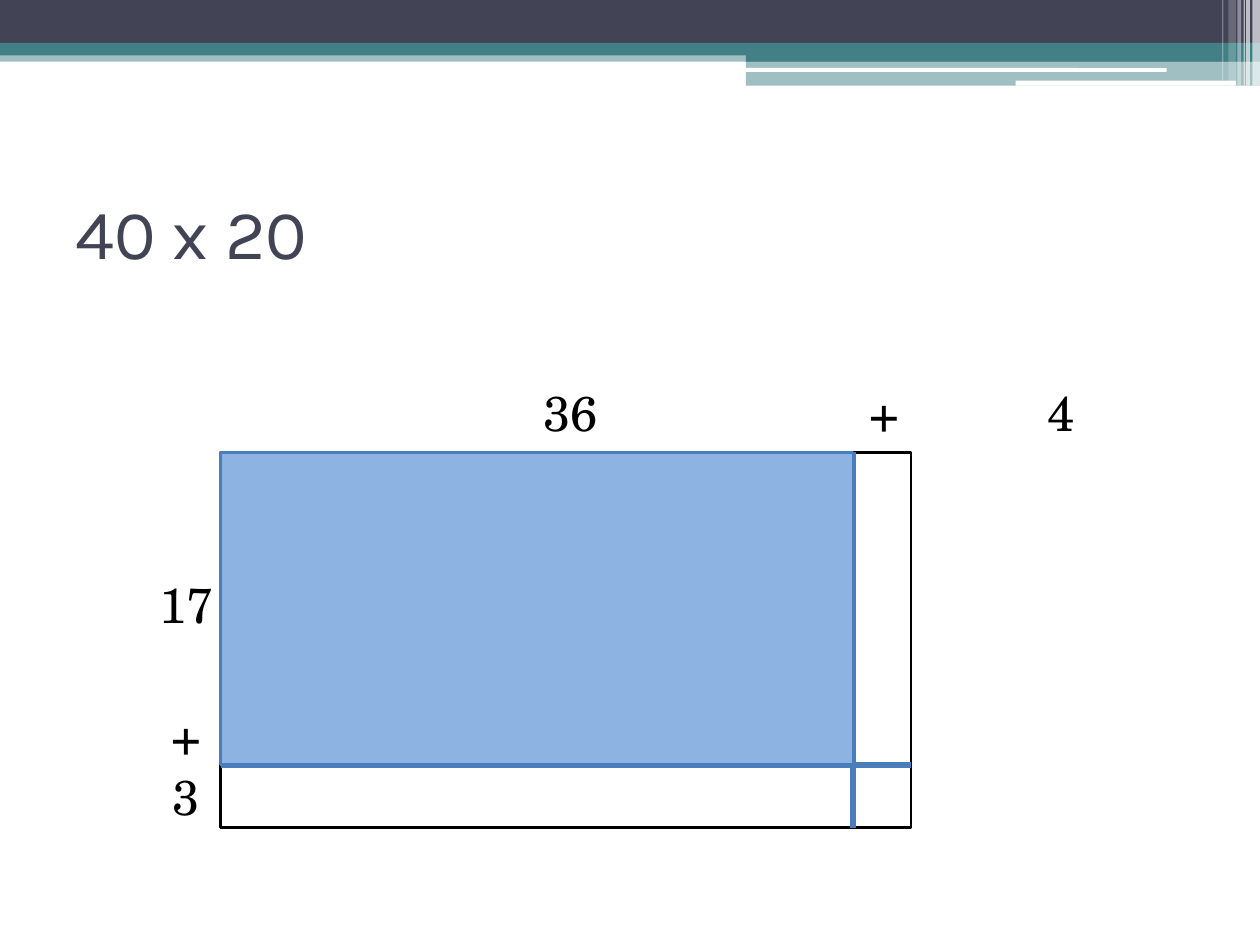
from lxml.etree import SubElement
from pptx import Presentation
from pptx.dml.color import RGBColor
from pptx.enum.shapes import MSO_CONNECTOR, MSO_SHAPE
from pptx.enum.text import MSO_ANCHOR, PP_ALIGN
from pptx.oxml.ns import qn
from pptx.util import Inches, Pt

WHITE = RGBColor(0xFF, 0xFF, 0xFF)
BLACK = RGBColor(0, 0, 0)
SLATE = RGBColor(0x42, 0x44, 0x56)
TEAL = RGBColor(0x43, 0x80, 0x86)
BLUE = RGBColor(0x4A, 0x7E, 0xBB)
LIGHT_BLUE = RGBColor(0x8D, 0xB3, 0xE2)

deck = Presentation()
deck.slide_width = Inches(10)
deck.slide_height = Inches(7.5)
page = deck.slides.add_slide(deck.slide_layouts[5])


def add_box(left, top, width, height, fill=None, opacity=100, line=None,
            kind=MSO_SHAPE.RECTANGLE):
    box = page.shapes.add_shape(kind, Inches(left), Inches(top),
                                Inches(width), Inches(height))
    box.shadow.inherit = False
    if fill is None:
        box.fill.background()
    else:
        box.fill.solid()
        box.fill.fore_color.rgb = fill
        if opacity < 100:
            color = box.fill._xPr.find(qn("a:solidFill"))[0]
            SubElement(color, qn("a:alpha"), val=str(opacity * 1000))
    if line is None:
        box.line.fill.background()
    else:
        box.line.color.rgb = line
        box.line.width = Pt(1.5)
    return box


def add_run(para, text, font, size, color):
    span = para.add_run()
    span.text = text
    span.font.name = font
    span.font.size = Pt(size)
    span.font.color.rgb = color


# Header bands
for left, top, width, height, color, opacity in [
    (0, 0.4, 10, 0.09, TEAL, 50),
    (0, 0, 10, 0.34, SLATE, 100),
    (0, 0.34, 10, 0.1, TEAL, 100),
    (5.92, 0.39, 4.08, 0.1, TEAL, 100),
    (5.92, 0.48, 4.08, 0.2, TEAL, 50),
]:
    add_box(left, top, width, height, color, opacity)

for left, top, width, height in [(5.91, 0.54, 3.35, 0.03), (8.06, 0.64, 1.75, 0.04)]:
    add_box(left, top, width, height, WHITE, kind=MSO_SHAPE.ROUNDED_RECTANGLE)

# Pale vertical stripes at the right edge
for left, width, height, opacity in [
    (9.94, 0.06, 0.68, 65),
    (9.89, 0.03, 0.68, 65),
    (9.87, 0.01, 0.68, 60),
    (9.82, 0.03, 0.68, 40),
    (9.75, 0.06, 0.64, 20),
    (9.7, 0.01, 0.64, 30),
]:
    add_box(left, 0, width, height, WHITE, opacity)

# Title
title = page.shapes.title
title.left, title.top = Inches(0.5), Inches(1.25)
title.width, title.height = Inches(9), Inches(1.17)
title.text_frame.vertical_anchor = MSO_ANCHOR.MIDDLE
title_para = title.text_frame.paragraphs[0]
title_para.alignment = PP_ALIGN.LEFT
add_run(title_para, "40 x 20", "Karla", 40, SLATE)

# Area model: the whole rectangle, its two dividers and the 36 by 17 part
left, top, right, bottom = 1.75, 3.59, 7.23, 6.57
split_x, split_y = 6.77, 6.07
add_box(left, top, right - left, bottom - top, line=BLACK)
for x1, y1, x2, y2 in [(left, split_y, right, split_y), (split_x, top, split_x, bottom)]:
    divider = page.shapes.add_connector(MSO_CONNECTOR.STRAIGHT, Inches(x1), Inches(y1),
                                        Inches(x2), Inches(y2))
    divider.line.color.rgb = BLUE
    divider.line.width = Pt(3.5)
    SubElement(divider._element.spPr, qn("a:effectLst"))
add_box(left, top, split_x - left, split_y - top, LIGHT_BLUE, line=BLUE)

# Side lengths, each centred on its point
label_width, label_height = 0.8, 0.5
for text, x, y in [
    ("36", 4.53, 3.27),
    ("+", 7.02, 3.27),
    ("4", 8.42, 3.27),
    ("17", 1.48, 4.79),
    ("+", 1.48, 5.83),
    ("3", 1.48, 6.32),
]:
    label = page.shapes.add_textbox(Inches(x - label_width / 2), Inches(y - label_height / 2),
                                    Inches(label_width), Inches(label_height))
    frame = label.text_frame
    frame.word_wrap = True
    frame.vertical_anchor = MSO_ANCHOR.MIDDLE
    frame.margin_top = frame.margin_bottom = 0
    para = frame.paragraphs[0]
    para.alignment = PP_ALIGN.CENTER
    add_run(para, text, "TeX Gyre Schola", 28, BLACK)

deck.save("out.pptx")
